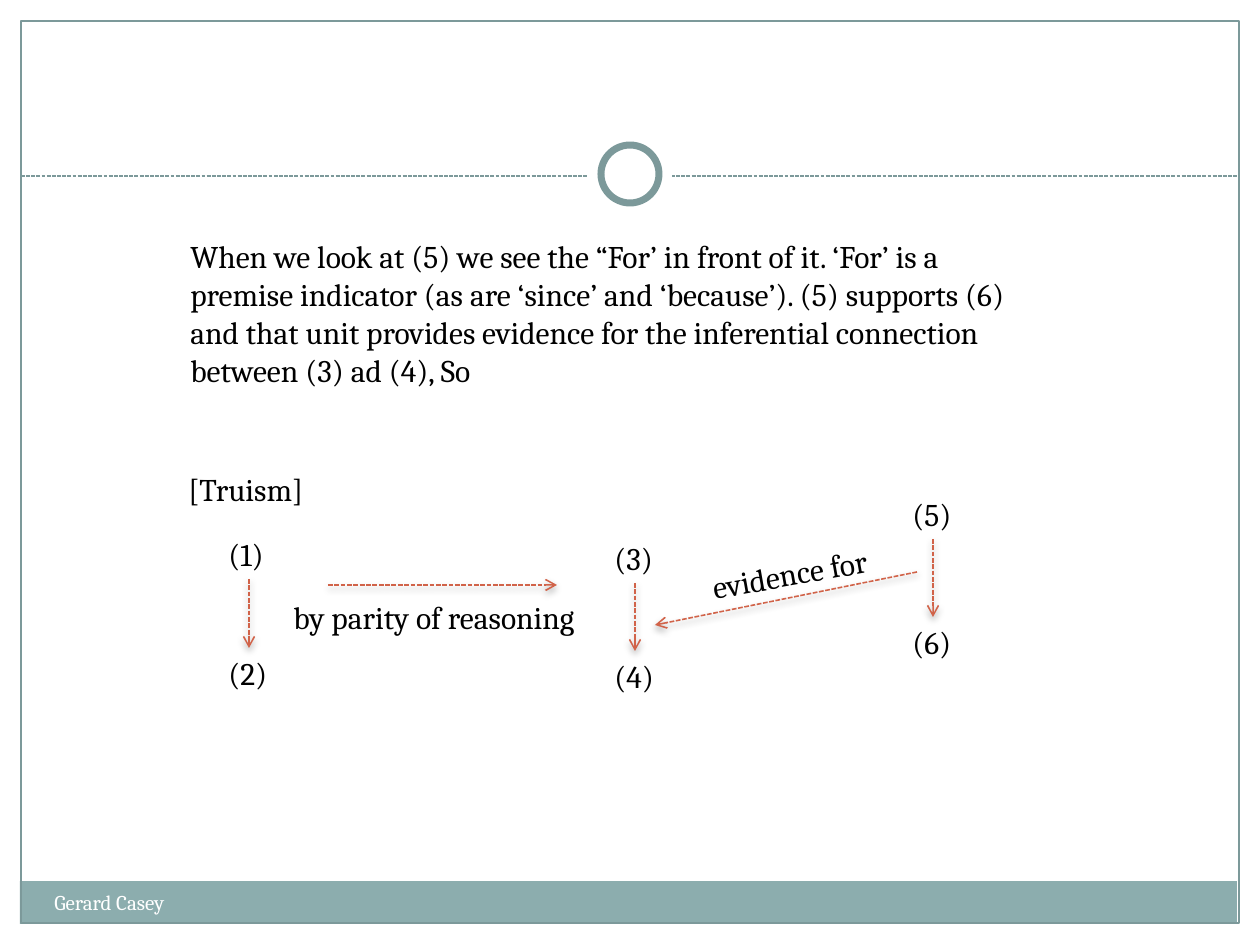
import pptx
import pptx.util
import pptx.dml.color
import pptx.enum.dml
import pptx.enum.shapes
import pptx.enum.text
import pptx.oxml

SCALE = 914400 / 126  # EMU per px
WHITE = pptx.dml.color.RGBColor(0xFF, 0xFF, 0xFF)
BLACK = pptx.dml.color.RGBColor(0x00, 0x00, 0x00)
TEAL = pptx.dml.color.RGBColor(0x7C, 0x99, 0x9A)
PALE_TEAL = pptx.dml.color.RGBColor(0x8C, 0xAD, 0xAE)
RUST = pptx.dml.color.RGBColor(0xD1, 0x63, 0x49)
NS = 'xmlns:a="http://schemas.openxmlformats.org/drawingml/2006/main"'
NO_SHADOW = f"<a:effectLst {NS}/>"
SOFT_SHADOW = (
    f'<a:effectLst {NS}><a:outerShdw blurRad="50800" dist="25400" dir="5400000" '
    'rotWithShape="0"><a:srgbClr val="000000"><a:alpha val="35000"/></a:srgbClr>'
    "</a:outerShdw></a:effectLst>"
)

deck = pptx.Presentation()
deck.slide_width = round(1260 * SCALE)
deck.slide_height = round(945 * SCALE)
slide = deck.slides.add_slide(deck.slide_layouts[6])


def add_label(text, left, top, width, height=50, size=18, color=BLACK, wrap=False, grow=True):
    label = slide.shapes.add_textbox(*(round(v * SCALE) for v in (left, top, width, height)))
    frame = label.text_frame
    frame.word_wrap = wrap
    if grow:
        frame.auto_size = pptx.enum.text.MSO_AUTO_SIZE.SHAPE_TO_FIT_TEXT
    run = frame.paragraphs[0].add_run()
    run.text = text
    run.font.name = "Cambria"
    run.font.size = pptx.util.Pt(size)
    run.font.color.rgb = color
    return label


def add_dashed_line(start_x, start_y, end_x, end_y, color, weight, effect, arrow=False):
    line = slide.shapes.add_connector(
        pptx.enum.shapes.MSO_CONNECTOR.STRAIGHT,
        *(round(v * SCALE) for v in (start_x, start_y, end_x, end_y)))
    line.line.color.rgb = color
    line.line.width = pptx.util.Pt(weight)
    line.line.dash_style = pptx.enum.dml.MSO_LINE.SQUARE_DOT
    properties = line.line._get_or_add_ln()
    if arrow:
        properties.append(pptx.oxml.parse_xml(f'<a:tailEnd {NS} type="arrow"/>'))
    properties.addnext(pptx.oxml.parse_xml(effect))
    return line


# Frame: footer band, border, divider and ring
add_dashed_line(21, 176, 1239, 176, TEAL, 0.75, NO_SHADOW)
RECTANGLE = pptx.enum.shapes.MSO_SHAPE.RECTANGLE
OVAL = pptx.enum.shapes.MSO_SHAPE.OVAL
for kind, box, fill, outline, weight in (
    (RECTANGLE, (20, 881, 1217, 43), PALE_TEAL, None, 0),
    (RECTANGLE, (21, 21, 1218, 902), None, TEAL, 0.75),
    (OVAL, (588, 132, 84, 84), WHITE, None, 0),
    (OVAL, (601, 145, 58, 58), WHITE, TEAL, 4),
):
    part = slide.shapes.add_shape(kind, *(round(v * SCALE) for v in box))
    part.shadow.inherit = False
    if fill is None:
        part.fill.background()
    else:
        part.fill.solid()
        part.fill.fore_color.rgb = fill
    if outline is None:
        part.line.fill.background()
    else:
        part.line.color.rgb = outline
        part.line.width = pptx.util.Pt(weight)

# Footer and explanation
add_label("Gerard Casey", 42, 883, 494, size=12, color=WHITE, wrap=True, grow=False)
add_label(
    "When we look at (5) we see the “For’ in front of it. ‘For’ is a premise indicator "
    "(as are ‘since’ and ‘because’). (5) supports (6) and that unit provides evidence "
    "for the inferential connection between (3) ad (4), So",
    178, 231, 847, 165, wrap=True)

# Premise above conclusion, joined by an arrow
NUMBER_WIDTH = 66
for premise, conclusion, center, premise_top, conclusion_top in (
    ("(1)", "(2)", 249, 529, 648),
    ("(3)", "(4)", 635, 533, 651),
    ("(5)", "(6)", 933, 489, 617),
):
    left = center - NUMBER_WIDTH / 2
    upper = add_label(premise, left, premise_top, NUMBER_WIDTH)
    lower = add_label(conclusion, left, conclusion_top, NUMBER_WIDTH)
    support = add_dashed_line(center, premise_top + 50, center, conclusion_top,
                              RUST, 0.9, SOFT_SHADOW, arrow=True)
    support.begin_connect(upper, 2)
    support.end_connect(lower, 0)

# Links between the arguments
add_label("[Truism]", 176, 464, 151)
add_label("by parity of reasoning", 281, 592, 331)
add_dashed_line(328, 585, 557, 585, RUST, 0.9, SOFT_SHADOW, arrow=True)
add_dashed_line(917, 572, 655, 625, RUST, 0.9, SOFT_SHADOW, arrow=True)
evidence = add_label("evidence for", 699, 547, 198, wrap=True)
evidence.rotation = 350

deck.save("out.pptx")
